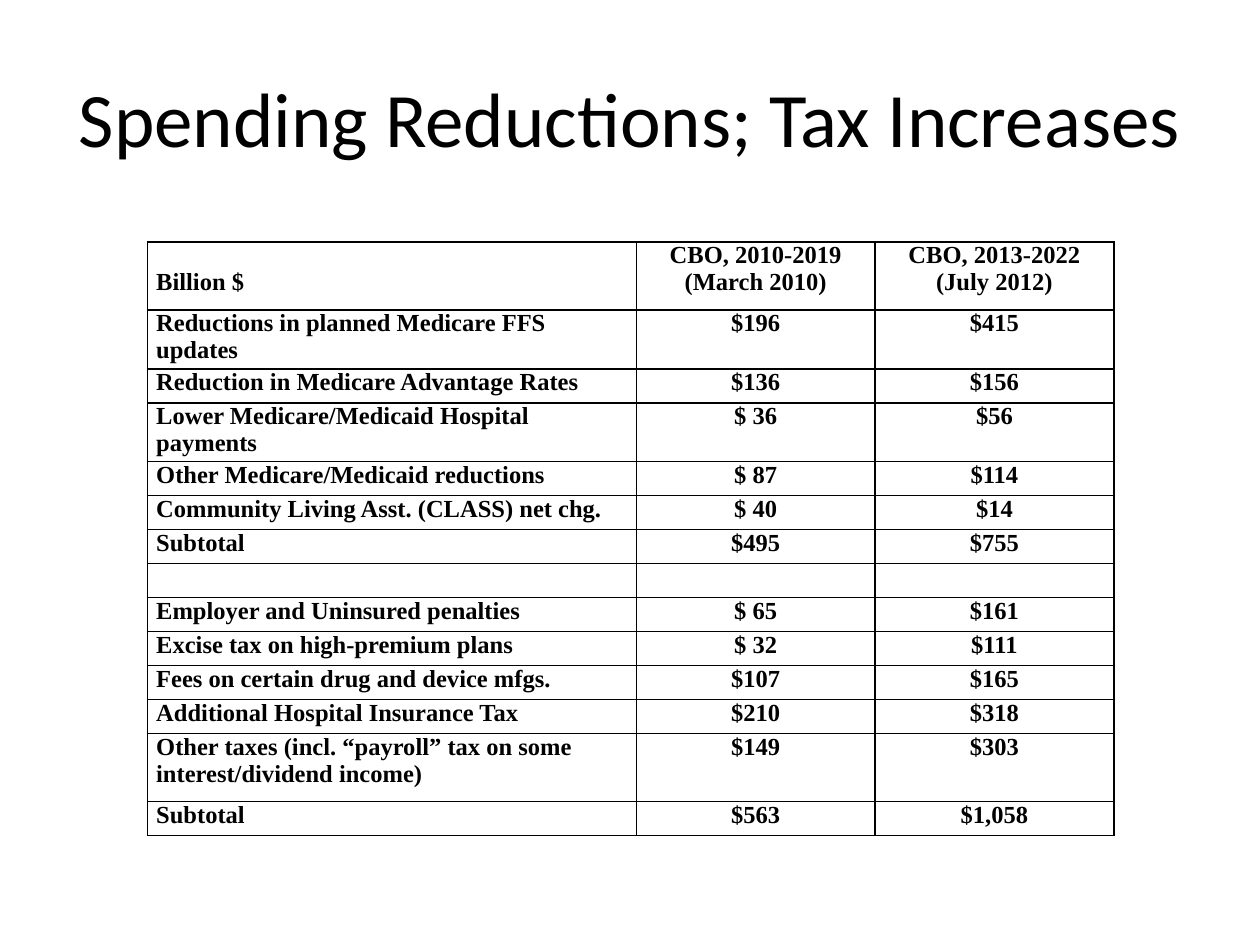
from lxml.etree import SubElement
from pptx import Presentation
from pptx.dml.color import RGBColor
from pptx.enum.text import MSO_ANCHOR, PP_ALIGN
from pptx.oxml.ns import qn
from pptx.util import Inches, Pt

COLORS = {"text": "000000", "border": "000000", "background": "FFFFFF"}
HEADER = ("Billion $", "CBO, 2010-2019\n(March 2010)", "CBO, 2013-2022\n(July 2012)")
ROWS = [
    HEADER,
    ("Reductions in planned Medicare FFS updates", "$196", "$415"),
    ("Reduction in Medicare Advantage Rates", "$136", "$156"),
    ("Lower Medicare/Medicaid Hospital payments", "$ 36", "$56"),
    ("Other Medicare/Medicaid reductions", "$ 87", "$114"),
    ("Community Living Asst. (CLASS) net chg.", "$ 40", "$14"),
    ("Subtotal", "$495", "$755"),
    ("", "", ""),
    ("Employer and Uninsured penalties", "$ 65", "$161"),
    ("Excise tax on high-premium plans", "$ 32", "$111"),
    ("Fees on certain drug and device mfgs.", "$107", "$165"),
    ("Additional Hospital Insurance Tax", "$210", "$318"),
    ("Other taxes (incl. “payroll” tax on some interest/dividend income)", "$149", "$303"),
    ("Subtotal", "$563", "$1,058"),
]
TALL_ROWS = (0, 12)


def write_text(frame, text, font, size, bold=False, align=PP_ALIGN.LEFT):
    """Fill a text frame with one formatted paragraph per line of text."""
    for index, line in enumerate(text.split("\n")):
        paragraph = frame.add_paragraph() if index else frame.paragraphs[0]
        paragraph.alignment = align
        if not line:
            SubElement(paragraph._p, qn("a:endParaRPr"), sz=str(size * 100))
            continue
        run = paragraph.add_run()
        run.text = line
        run.font.name, run.font.size, run.font.bold = font, Pt(size), bold
        run.font.color.rgb = RGBColor.from_string(COLORS["text"])


class SlideBuilder:
    """Hold the style and current slide; lengths are units of a 100 by 75 grid."""

    unit = Inches(0.1)
    title_font = "Calibri"
    table_font = "Times New Roman"
    row_height = 2.7
    side_margin = 0.7

    def __init__(self, presentation):
        self.slide = presentation.slides.add_slide(presentation.slide_layouts[6])
        fill = self.slide.background.fill
        fill.solid()
        fill.fore_color.rgb = RGBColor.from_string(COLORS["background"])

    def length(self, units):
        return round(units * self.unit)

    def title(self, text, *box):
        shape = self.slide.shapes.add_textbox(*map(self.length, box))
        frame = shape.text_frame
        frame.word_wrap = True
        frame.vertical_anchor = MSO_ANCHOR.MIDDLE
        write_text(frame, text, self.title_font, 44, align=PP_ALIGN.CENTER)

    def table(self, rows, column_widths, tall_rows, *box):
        shape = self.slide.shapes.add_table(
            len(rows), len(column_widths), *map(self.length, box))
        table = shape.table
        table.first_row = table.horz_banding = False
        for column, width in zip(table.columns, column_widths):
            column.width = self.length(width)
        for row_index, values in enumerate(rows):
            height = self.row_height * (2 if row_index in tall_rows else 1)
            table.rows[row_index].height = self.length(height)
            for column_index, text in enumerate(values):
                self.cell(table.cell(row_index, column_index), text, column_index > 0)
        table.cell(0, 0).margin_top = self.length(2.15)

    def cell(self, cell, text, centered):
        cell.margin_left = cell.margin_right = self.length(self.side_margin)
        cell.margin_top = cell.margin_bottom = 0
        for side in ("L", "R", "T", "B"):
            line = SubElement(cell._tc.get_or_add_tcPr(), qn(f"a:ln{side}"), w=str(Pt(1)))
            SubElement(SubElement(line, qn("a:solidFill")), qn("a:srgbClr"),
                       val=COLORS["border"])
        cell.fill.background()
        align = PP_ALIGN.CENTER if centered else PP_ALIGN.LEFT
        write_text(cell.text_frame, text, self.table_font, 14, bold=True, align=align)


def main():
    """Build and save the slide."""
    presentation = Presentation()
    presentation.slide_width, presentation.slide_height = Inches(10), Inches(7.5)
    builder = SlideBuilder(presentation)
    builder.title("Spending Reductions; Tax Increases", 5, 3, 90, 12.5)
    builder.table(ROWS, (38.8, 18.95, 18.95), TALL_ROWS, 11.7, 19.2, 76.7, 47.2)
    presentation.save("out.pptx")


if __name__ == "__main__":
    main()
